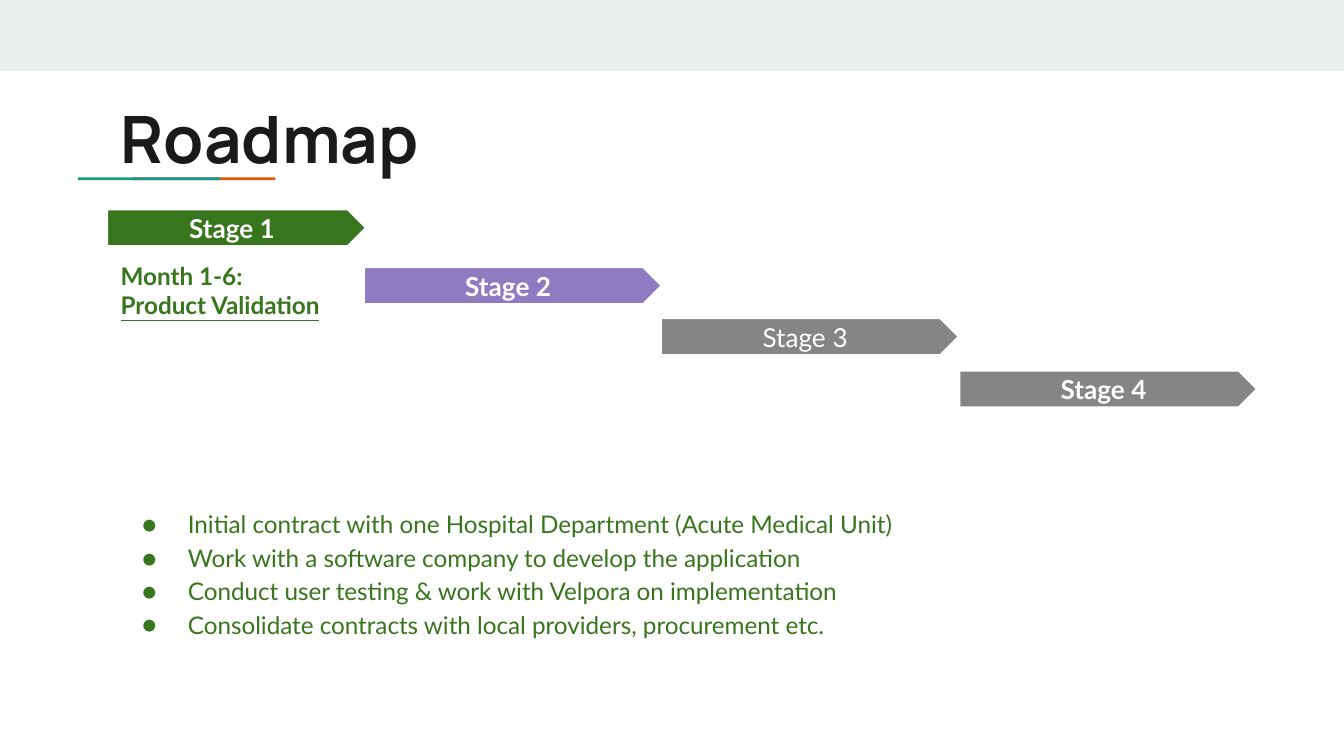
from dataclasses import dataclass

from lxml import etree
from pptx import Presentation
from pptx.dml.color import RGBColor
from pptx.enum.shapes import MSO_SHAPE
from pptx.enum.text import MSO_ANCHOR, PP_ALIGN
from pptx.oxml.ns import qn
from pptx.util import Inches, Pt


@dataclass(frozen=True)
class Theme:
    band: str = "E9EDEE"
    teal: str = "1A9988"
    orange: str = "EB5600"
    ink: str = "1A1A1A"
    green: str = "38761D"
    purple: str = "8E7CC3"
    grey: str = "858585"
    white: str = "FFFFFF"
    heading: str = "Manrope"
    body: str = "Lato"
    title_size: int = 35
    stage_size: int = 14
    text_size: int = 13


THEME = Theme()


def add_run(p, text, *, size, color, font=THEME.body, bold=False, underline=False):
    r = p.add_run()
    r.text = text
    f = r.font
    f.name, f.size, f.bold = font, Pt(size), bold
    f.underline = underline
    f.color.rgb = RGBColor.from_string(color)


def set_bullet(p, color, font, left=0.5, hanging=0.34):
    pPr = p._p.get_or_add_pPr()
    pPr.set("marL", str(Inches(left)))
    pPr.set("indent", str(-Inches(hanging)))
    bu_clr = etree.SubElement(pPr, qn("a:buClr"))
    etree.SubElement(bu_clr, qn("a:srgbClr"), val=color)
    etree.SubElement(pPr, qn("a:buFont"), typeface=font)
    etree.SubElement(pPr, qn("a:buChar"), char="●")


class SlideBuilder:
    """Holds the theme and the slide that is being built."""

    def __init__(self, s, theme):
        self.s = s
        self.t = theme

    def shape(self, kind, x, y, w, h, fill, line=None):
        sp = self.s.shapes.add_shape(kind, Inches(x), Inches(y), Inches(w), Inches(h))
        sp.shadow.inherit = False
        sp.fill.solid()
        sp.fill.fore_color.rgb = RGBColor.from_string(fill)
        if line:
            sp.line.color.rgb = RGBColor.from_string(line)
            sp.line.width = Pt(0.75)
        else:
            sp.line.fill.background()
        return sp

    def frame(self, sp, anchor=MSO_ANCHOR.TOP):
        """Set wrapping, insets and anchor, and return the text frame."""
        tf = sp.text_frame
        tf.word_wrap = True
        tf.vertical_anchor = anchor
        tf.margin_left = tf.margin_right = Inches(0.1)
        tf.margin_top = tf.margin_bottom = Inches(0.1)
        return tf

    def text_box(self, x, y, w, h):
        sp = self.s.shapes.add_textbox(Inches(x), Inches(y), Inches(w), Inches(h))
        return self.frame(sp)

    def title(self, text):
        tf = self.text_box(0.8, 0.63, 8.41, 0.59)
        add_run(tf.paragraphs[0], text, size=self.t.title_size, color=self.t.ink,
                font=self.t.heading, bold=True)

    def stage(self, text, x, y, w, fill, bold=True):
        sp = self.shape(MSO_SHAPE.PENTAGON, x, y, w, 0.27, fill, self.t.white)
        sp.adjustments[0] = 0.5
        p = self.frame(sp, MSO_ANCHOR.MIDDLE).paragraphs[0]
        p.alignment = PP_ALIGN.CENTER
        add_run(p, text, size=self.t.stage_size, color=self.t.white, bold=bold)

    def stage_note(self, period, goal):
        p = self.text_box(0.8, 1.84, 1.76, 0.65).paragraphs[0]
        p.space_after = Pt(12)
        style = dict(size=self.t.text_size, color=self.t.green, bold=True)
        add_run(p, period, **style)
        add_run(p, goal, underline=True, **style)

    def bullets(self, items):
        tf = self.text_box(0.8, 3.66, 6.77, 1.15)
        for i, item in enumerate(items):
            p = tf.add_paragraph() if i else tf.paragraphs[0]
            p.line_spacing = 1.15
            set_bullet(p, self.t.green, self.t.body)
            add_run(p, item, size=self.t.text_size, color=self.t.green)


def main():
    prs = Presentation()
    prs.slide_width = Inches(10)
    prs.slide_height = Inches(10 * 9 / 16)
    s = prs.slides.add_slide(prs.slide_layouts[6])
    b = SlideBuilder(s, THEME)

    b.shape(MSO_SHAPE.RECTANGLE, 0, 0, 10, 0.53, THEME.band)
    for x, color in ((0.99, THEME.orange), (0.58, THEME.teal)):
        b.shape(MSO_SHAPE.RECTANGLE, x, 1.32, 1.06, 0.02, color)

    b.bullets([
        "Initial contract with one Hospital Department (Acute Medical Unit)",
        "Work with a software company to develop the application",
        "Conduct user testing & work with Velpora on implementation",
        "Consolidate contracts with local providers, procurement etc.",
    ])
    b.title("Roadmap")

    stages = (
        ("Stage 1", 0.8, 1.56, 1.92, THEME.green, True),
        ("Stage 2", 2.71, 1.99, 2.21, THEME.purple, True),
        ("Stage 3", 4.92, 2.37, 2.21, THEME.grey, False),
        ("Stage 4", 7.14, 2.76, 2.21, THEME.grey, True),
    )
    for stage in stages:
        b.stage(*stage)
    b.stage_note("Month 1-6: ", "Product Validation")

    prs.save("out.pptx")


if __name__ == "__main__":
    main()
